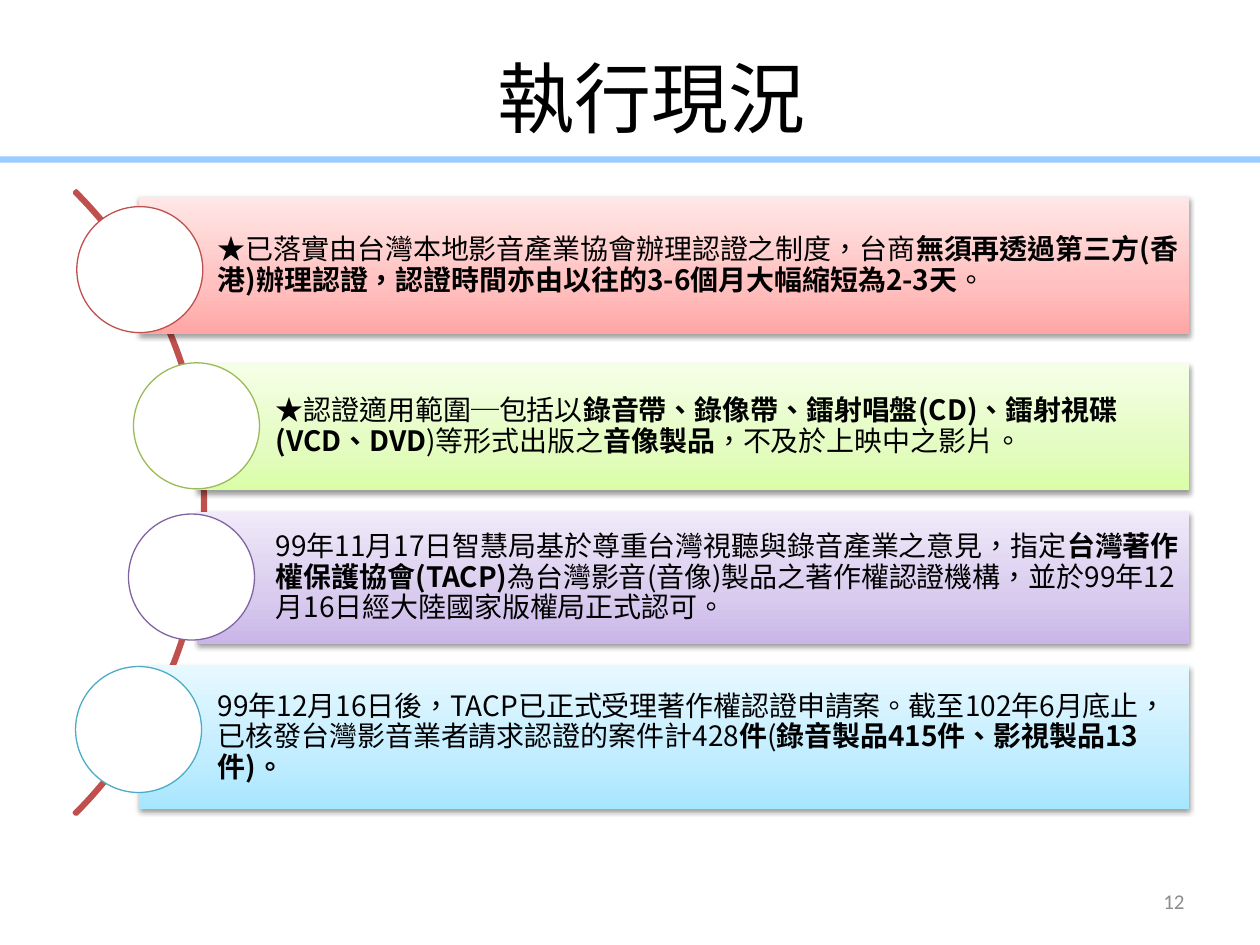
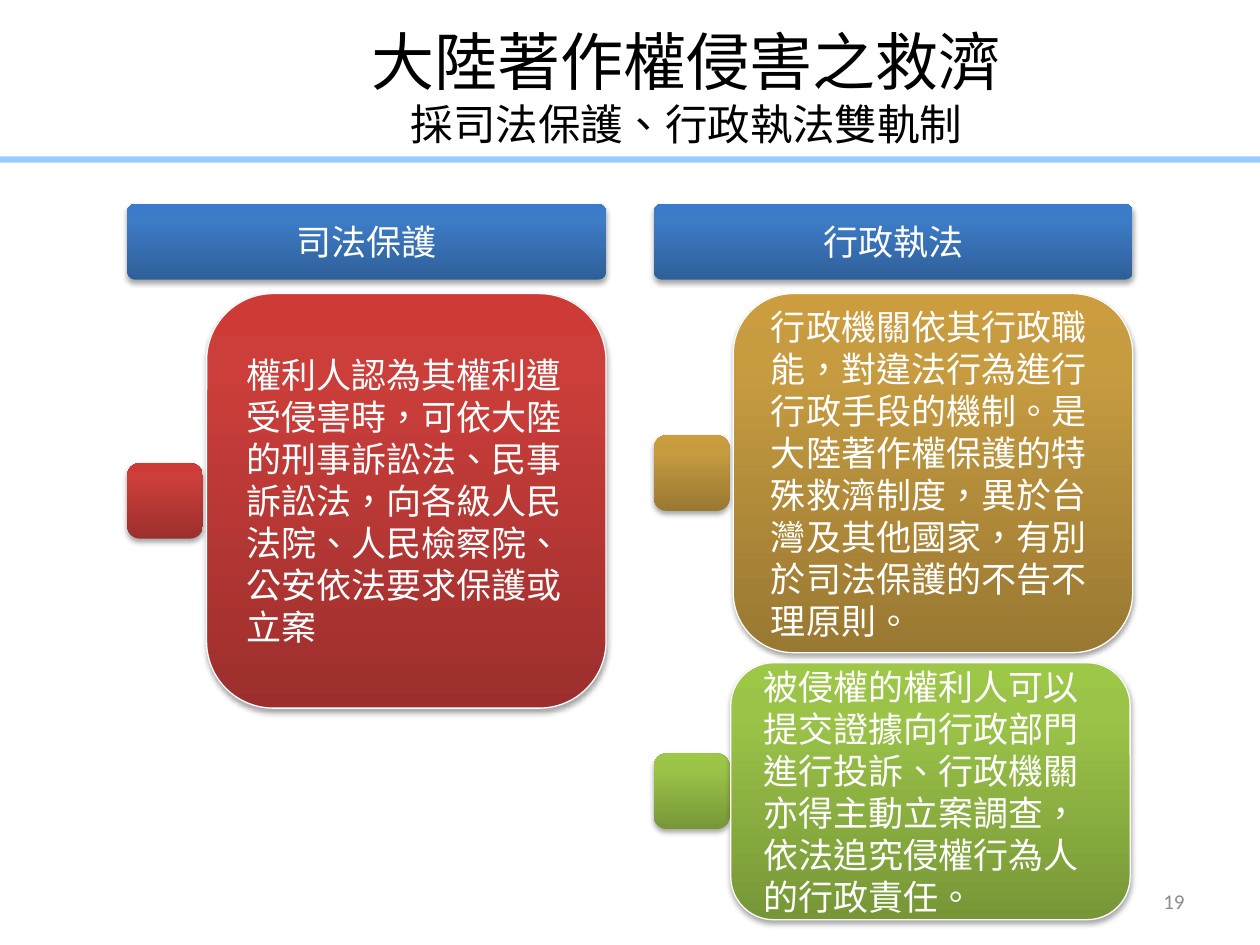
from lxml import etree
from pptx import Presentation
from pptx import util as u
from pptx.dml.color import RGBColor
from pptx.enum import shapes, text
from pptx.oxml import ns

CJK_FONT = "Noto Sans CJK SC"
LINE_FACTOR = 1.2  # line pitch relative to the text size

BLACK = RGBColor(0x00, 0x00, 0x00)
WHITE = RGBColor(0xFF, 0xFF, 0xFF)
GREY = RGBColor(0x8C, 0x8C, 0x8C)
SKY = RGBColor(0x99, 0xCC, 0xFF)
RED = RGBColor(0xC0, 0x50, 0x4D)
GREEN = RGBColor(0x9B, 0xBB, 0x59)
PURPLE = RGBColor(0x80, 0x64, 0xA2)
AQUA = RGBColor(0x4B, 0xAC, 0xC6)


def gradient(positions, *colors):
    return [(position, RGBColor.from_string(color))
            for position, color in zip(positions, colors)]


# Gradient stops run from the bottom edge to the top edge
PALE, DEEP = (0, 35, 100), (0, 80, 100)
PALE_RED = gradient(PALE, "FFA6A5", "FFC0BF", "FFE7E7")
PALE_GREEN = gradient(PALE, "DAFDA7", "E4FCC2", "F5FFE7")
PALE_PURPLE = gradient(PALE, "C9B5E8", "D8CBEE", "F0EAF9")
PALE_AQUA = gradient(PALE, "A7E6FF", "C1EDFF", "E7F8FF")
DEEP_BLUE = gradient(DEEP, "2F5F99", "3D7CC7", "3A7CCB")
DEEP_RED = gradient(DEEP, "9C2F2D", "CB3E3A", "CE3B37")
DEEP_GOLD = gradient(DEEP, "997832", "C79C41", "CB9D3F")
DEEP_GREEN = gradient(DEEP, "779737", "9BC348", "9DC746")

# Bars: left, top, width, height, circle left, circle top, colours, (text, bold) runs
STATUS_BARS = [
    (1.1, 1.56, 8.34, 1.09, 0.61, 1.64, PALE_RED, RED, [
        ("★已落實由台灣本地影音產業協會辦理認證之制度，台商", False),
        ("無須再透過第三方(香港)辦理認證，認證時間亦由以往的3-6個月大幅縮短為2-3天", True),
        ("。", False)]),
    (1.56, 2.88, 7.88, 1.01, 1.06, 2.88, PALE_GREEN, GREEN, [
        ("★認證適用範圍─包括以", False),
        ("錄音帶、錄像帶、鐳射唱盤(CD)、鐳射視碟(VCD、DVD", True),
        (")等形式出版之", False),
        ("音像製品", True),
        ("，不及於上映中之影片。", False)]),
    (1.56, 4.06, 7.88, 1.05, 1.02, 4.08, PALE_PURPLE, PURPLE, [
        ("99年11月17日智慧局基於尊重台灣視聽與錄音產業之意見，指定", False),
        ("台灣著作權保護協會(TACP)", True),
        ("為台灣影音(音像)製品之著作權認證機構，並於99年12月16日經大陸國家版權局正式認可。",
         False)]),
    (1.1, 5.28, 8.34, 1.14, 0.6, 5.29, PALE_AQUA, AQUA, [
        ("99年12月16日後，TACP已正式受理著作權認證申請案。"
         "截至102年6月底止，已核發台灣影音業者請求認證的案件計428", False),
        ("件", True),
        ("(", False),
        ("錄音製品415件、影視製品13件)。", True)]),
]

# Columns: left, heading, cards (left offset, top, height, colours, text)
REMEDY_COLUMNS = [
    (1.01, "司法保護", [
        (0.63, 2.33, 3.29, DEEP_RED,
         "權利人認為其權利遭受侵害時，可依大陸的刑事訴訟法、民事訴訟法，"
         "向各級人民法院、人民檢察院、公安依法要求保護或立案")]),
    (5.19, "行政執法", [
        (0.63, 2.33, 2.85, DEEP_GOLD,
         "行政機關依其行政職能，對違法行為進行行政手段的機制。是大陸著作權保護的"
         "特殊救濟制度，異於台灣及其他國家，有別於司法保護的不告不理原則。"),
        (0.61, 5.26, 2.04, DEEP_GREEN,
         "被侵權的權利人可以提交證據向行政部門進行投訴、行政機關亦得主動立案調查，"
         "依法追究侵權行為人的行政責任。")]),
]


def write_text(shape, paragraphs, *, size=20, color=BLACK, font=CJK_FONT,
               align=text.PP_ALIGN.LEFT, anchor=text.MSO_ANCHOR.MIDDLE,
               insets=(0.1, 0.05, 0.1, 0.05), pitch=None):
    """Fill a shape; each paragraph is (runs, size), each run (words, bold)."""
    if isinstance(paragraphs, str):
        paragraphs = [([(paragraphs, False)], size)]
    frame = shape.text_frame
    frame.word_wrap = True
    frame.vertical_anchor = anchor
    (frame.margin_left, frame.margin_top,
     frame.margin_right, frame.margin_bottom) = map(u.Inches, insets)
    for index, (runs, points) in enumerate(paragraphs):
        paragraph = frame.add_paragraph() if index else frame.paragraphs[0]
        paragraph.alignment = align
        paragraph.line_spacing = u.Pt(pitch or round(points * LINE_FACTOR, 1))
        for words, bold in runs:
            run = paragraph.add_run()
            run.text = words
            run.font.size = u.Pt(points)
            run.font.bold = bold
            run.font.color.rgb = color
            run.font.name = font
            properties = run._r.get_or_add_rPr()
            properties.set("lang", "zh-TW")
            etree.SubElement(properties, ns.qn("a:ea"), typeface=font)


def add_textbox(slide, left, top, width, height, paragraphs, **text_format):
    box = slide.shapes.add_textbox(*map(u.Inches, (left, top, width, height)))
    write_text(box, paragraphs, **text_format)


def set_gradient(shape, stops):
    shape.fill.gradient()
    shape.fill.gradient_angle = 90
    stop_list = shape._element.spPr.find(".//" + ns.qn("a:gsLst"))
    stop_list.clear()
    for position, color in stops:
        stop = etree.SubElement(stop_list, ns.qn("a:gs"), pos=str(position * 1000))
        etree.SubElement(stop, ns.qn("a:srgbClr"), val=str(color))


def set_shadow(shape, opacity, distance):
    effects = shape._element.spPr.find(ns.qn("a:effectLst"))
    shadow = etree.SubElement(
        effects, ns.qn("a:outerShdw"), blurRad=str(u.Pt(3.1)),
        dist=str(u.Pt(distance)), dir="5400000", rotWithShape="0")
    color = etree.SubElement(shadow, ns.qn("a:srgbClr"), val="000000")
    etree.SubElement(color, ns.qn("a:alpha"), val=str(opacity * 1000))


def add_shape(slide, kind, left, top, width, height, *, fill=None, line=None,
              line_width=0.75, adjustments=(), shadow=None):
    shape = slide.shapes.add_shape(kind, *map(u.Inches, (left, top, width, height)))
    shape.shadow.inherit = False
    for index, value in enumerate(adjustments):
        shape.adjustments[index] = value
    if fill is None:
        shape.fill.background()
    elif isinstance(fill, list):
        set_gradient(shape, fill)
    else:
        shape.fill.solid()
        shape.fill.fore_color.rgb = fill
    if line is None:
        shape.line.fill.background()
    else:
        shape.line.color.rgb = line
        shape.line.width = u.Pt(line_width)
    if shadow:
        set_shadow(shape, *shadow)
    return shape


def add_base_slide(presentation, number):
    """Blank slide with the shared band and page number."""
    slide = presentation.slides.add_slide(presentation.slide_layouts[6])
    add_shape(slide, shapes.MSO_SHAPE.RECTANGLE, -0.04, 1.24, 10.06, 0.05, fill=SKY)
    add_textbox(slide, 7.17, 6.95, 2.33, 0.4, str(number), size=12, color=GREY,
                font="Calibri", align=text.PP_ALIGN.RIGHT)
    return slide


def add_status_bar(slide, left, top, width, height, circle_left, circle_top,
                   fill, outline, runs):
    bar = add_shape(slide, shapes.MSO_SHAPE.RECTANGLE, left, top, width, height,
                    fill=fill, shadow=(38, 1.6))
    write_text(bar, [(runs, 16)], insets=(0.63, 0.04, 0.04, 0.04), pitch=17.4)
    add_shape(slide, shapes.MSO_SHAPE.OVAL, circle_left, circle_top, 1, 1,
              fill=WHITE, line=outline)


def add_rounded(slide, left, top, width, height, fill, corner=0.167, line=None):
    return add_shape(slide, shapes.MSO_SHAPE.ROUNDED_RECTANGLE, left, top, width,
                     height, fill=fill, line=line, adjustments=[corner],
                     shadow=(35, 1.8))


def add_remedy_column(slide, left, heading, cards):
    header = add_rounded(slide, left, 1.62, 3.8, 0.6, DEEP_BLUE, corner=0.1)
    write_text(header, heading, color=WHITE, align=text.PP_ALIGN.CENTER,
               insets=(0.04, 0.03, 0.04, 0.03))
    marker = 0.6
    for offset, top, height, fill, words in cards:
        add_rounded(slide, left, top + (height - marker) / 2, marker, marker, fill)
        card = add_rounded(slide, left + offset, top, 3.17, height, fill, line=WHITE)
        write_text(card, words, color=WHITE, insets=(0.16,) * 4)


def build_status_slide(presentation):
    slide = add_base_slide(presentation, 12)
    add_textbox(slide, 0.67, 0.29, 9, 0.96, "執行現況", size=44,
                align=text.PP_ALIGN.CENTER)
    add_shape(slide, shapes.MSO_SHAPE.BLOCK_ARC, -5.37, 0.49, 7, 7, line=RED,
              line_width=2, adjustments=(189, 27, 0.003))
    for bar in STATUS_BARS:
        add_status_bar(slide, *bar)


def build_remedy_slide(presentation):
    slide = add_base_slide(presentation, 19)
    add_textbox(slide, 1.46, 0.13, 7.98, 1.02,
                [([("大陸著作權侵害之救濟", False)], 36),
                 ([("採司法保護、行政執法雙軌制", False)], 24.3)],
                align=text.PP_ALIGN.CENTER, anchor=text.MSO_ANCHOR.TOP)
    for column in REMEDY_COLUMNS:
        add_remedy_column(slide, *column)


def main():
    presentation = Presentation()
    presentation.slide_width = u.Inches(10)
    presentation.slide_height = u.Inches(7.5)
    build_status_slide(presentation)
    build_remedy_slide(presentation)
    presentation.save("out.pptx")


if __name__ == "__main__":
    main()
